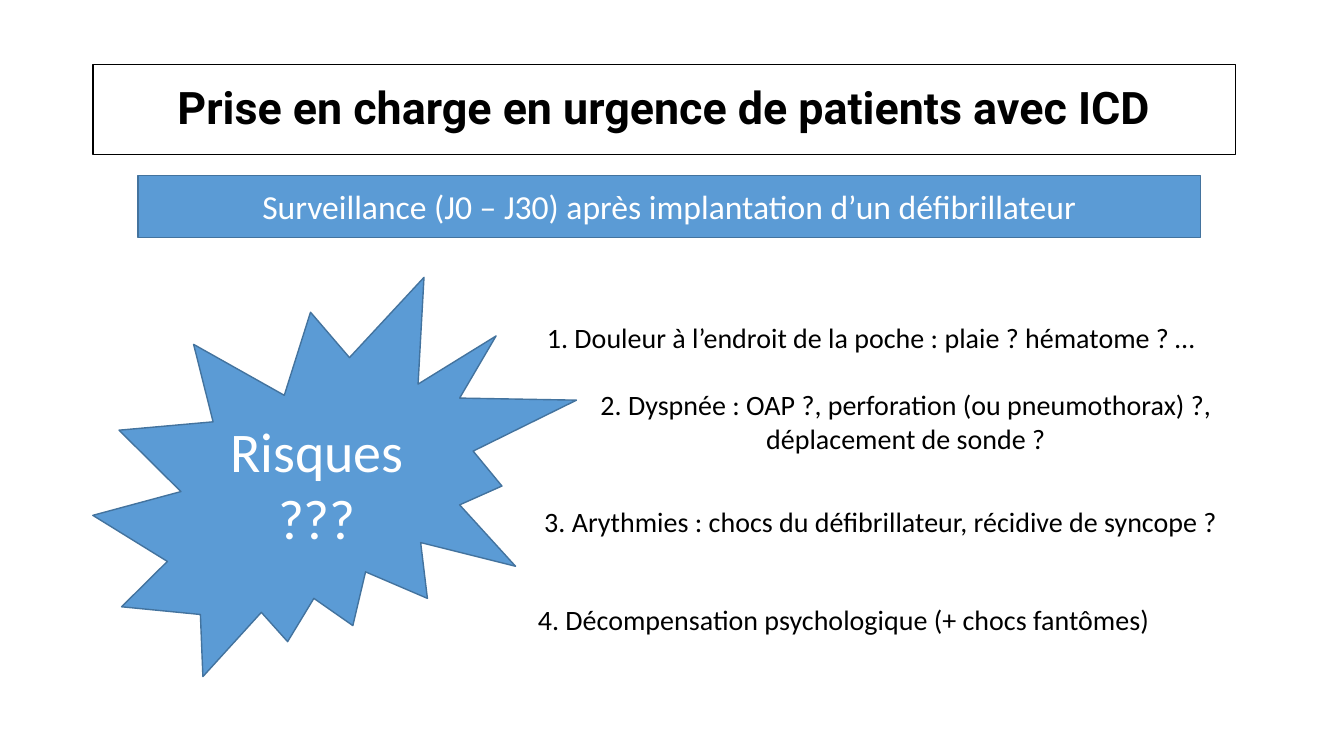
from pptx import Presentation
from pptx.dml.color import RGBColor
from pptx.enum.shapes import MSO_SHAPE as Preset
from pptx.enum.text import MSO_ANCHOR as Anchor, PP_ALIGN as Align
from pptx.util import Cm, Pt

BLACK, WHITE, BLUE, DARK_BLUE = "000000", "FFFFFF", "5B9BD5", "43739E"

TITLE = "Prise en charge en urgence de patients avec ICD"
SUBTITLE = "Surveillance (J0 – J30) après implantation d’un défibrillateur"
BURST = "Risques ???"
RISK_HEIGHT = 1.88
RISKS = [
    ("Douleur à l’endroit de la poche : plaie ? hématome ? …", 13.28, 7.57, 17.35),
    ("Dyspnée : OAP ?, perforation (ou pneumothorax) ?, déplacement de sonde ?",
     14.55, 9.68, 16.56),
    ("Arythmies : chocs du défibrillateur, récidive de syncope ?", 13.28, 12.19, 17.83),
    ("Décompensation psychologique (+ chocs fantômes)", 11.86, 14.66, 18.8),
]


def color(value):
    return RGBColor.from_string(value)


def add_box(slide, preset, box, text, size, ink, fill=None, line=None, font="Calibri"):
    shape = slide.shapes.add_shape(preset, *(Cm(length) for length in box))
    shape.shadow.inherit = False
    if fill:
        shape.fill.solid()
        shape.fill.fore_color.rgb = color(fill)
    else:
        shape.fill.background()
    if line:
        shape.line.color.rgb = color(line)
        shape.line.width = Pt(1)
    else:
        shape.line.fill.background()
    frame = shape.text_frame
    frame.word_wrap = True
    frame.vertical_anchor = Anchor.MIDDLE
    frame.text = text
    paragraph = frame.paragraphs[0]
    paragraph.alignment = Align.CENTER
    run = paragraph.runs[0]
    run.font.name = font
    run.font.size = Pt(size)
    run.font.color.rgb = color(ink)
    return paragraph


def main():
    """Build the slide on monitoring after a defibrillator implant."""
    presentation = Presentation()
    presentation.slide_width, presentation.slide_height = Cm(33.87), Cm(19.05)
    slide = presentation.slides.add_slide(presentation.slide_layouts[6])

    title = add_box(slide, Preset.RECTANGLE, (2.34, 1.63, 28.8, 2.26),
                    TITLE, 32, BLACK, line=BLACK, font="Roboto")
    title.line_spacing = 0.9
    title.runs[0].font.bold = True

    add_box(slide, Preset.RECTANGLE, (3.48, 4.42, 26.77, 1.57),
            SUBTITLE, 24, WHITE, BLUE, DARK_BLUE)
    add_box(slide, Preset.EXPLOSION2, (2.34, 6.99, 12.19, 10.06),
            BURST, 40, WHITE, BLUE, DARK_BLUE)
    for number, (risk, left, top, width) in enumerate(RISKS, start=1):
        add_box(slide, Preset.ROUNDED_RECTANGLE, (left, top, width, RISK_HEIGHT),
                f"{number}. {risk}", 20, BLACK, WHITE)

    presentation.save("out.pptx")


if __name__ == "__main__":
    main()
